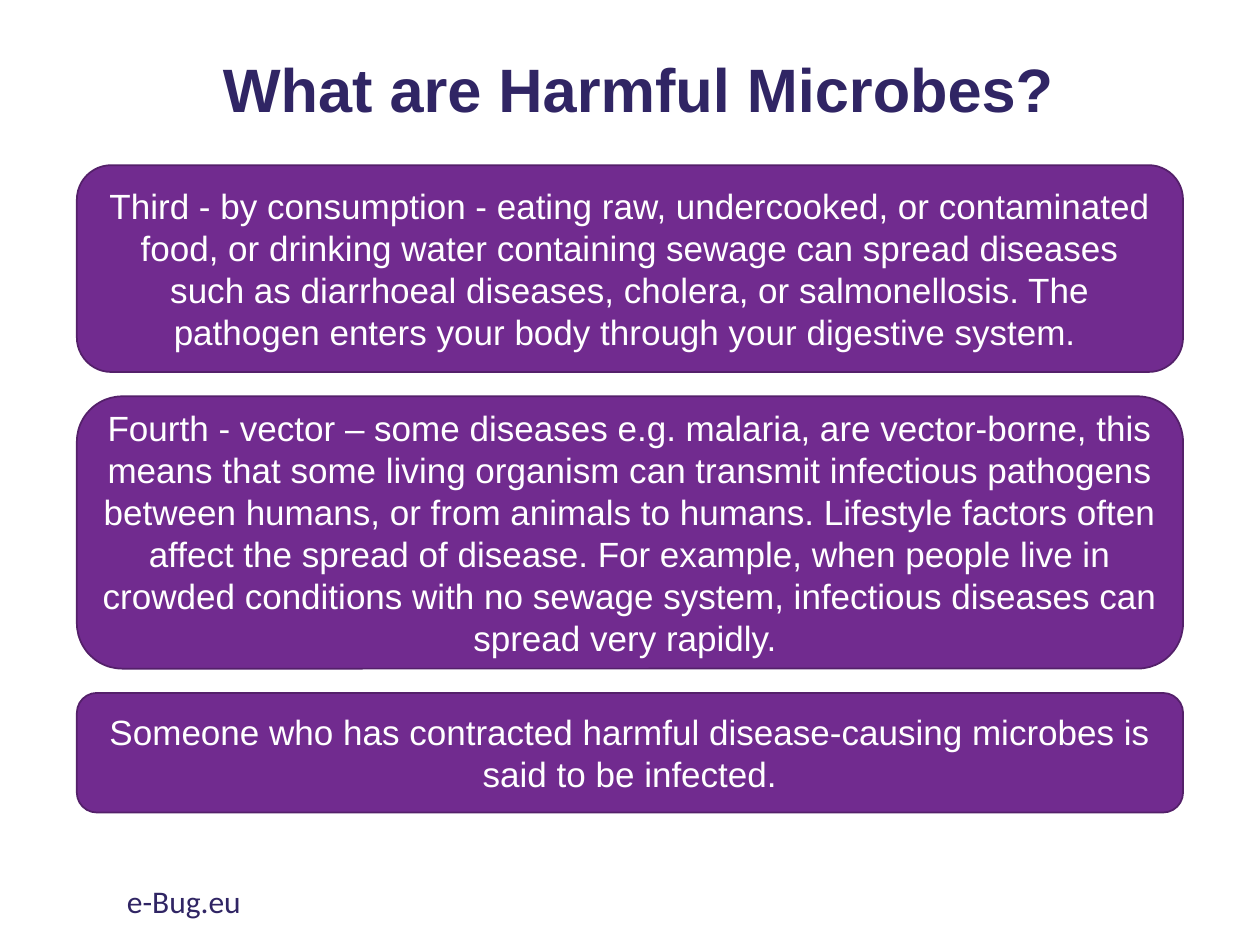
"""Builds the slide on how harmful microbes spread."""
from pptx import Presentation
from pptx.dml.color import RGBColor
from pptx.enum.shapes import MSO_SHAPE
from pptx.enum.text import MSO_ANCHOR, PP_ALIGN
from pptx.util import Cm, Pt

ROUNDED = MSO_SHAPE.ROUNDED_RECTANGLE
MIDDLE, TOP = MSO_ANCHOR.MIDDLE, MSO_ANCHOR.TOP
CENTER, LEFT = PP_ALIGN.CENTER, PP_ALIGN.LEFT

NAVY = RGBColor(0x30, 0x25, 0x64)
PURPLE = RGBColor(0x71, 0x2B, 0x8F)
DARK_PURPLE = RGBColor(0x54, 0x20, 0x6A)
WHITE = RGBColor(0xFF, 0xFF, 0xFF)

PANELS = [
    (4.17, "Third - by consumption - eating raw, undercooked, or contaminated food, "
           "or drinking water containing sewage can spread diseases such as diarrhoeal "
           "diseases, cholera, or salmonellosis. The pathogen enters your body through "
           "your digestive system. "),
    (5.49, "Fourth - vector – some diseases e.g. malaria, are vector-borne, this means "
           "that some living organism can transmit infectious pathogens between humans, "
           "or from animals to humans. Lifestyle factors often affect the spread of "
           "disease. For example, when people live in crowded conditions with no sewage "
           "system, infectious diseases can spread very rapidly. "),
    (2.41, "Someone who has contracted harmful disease-causing microbes is said to be "
           "infected."),
]
PANEL_LEFT, PANEL_TOP, PANEL_WIDTH, PANEL_GAP = 1.55, 3.33, 22.3, 0.49


class SlideBuilder:
    def __init__(self, slide):
        self.slide = slide

    def set_text(self, frame, text, size, color, font="Arial", bold=False,
                 align=CENTER, anchor=MIDDLE, spacing=1.0):
        frame.word_wrap = True
        frame.vertical_anchor = anchor
        frame.text = text
        paragraph = frame.paragraphs[0]
        paragraph.alignment = align
        paragraph.line_spacing = spacing
        style = paragraph.runs[0].font
        style.name, style.size, style.bold = font, Pt(size), bold
        style.color.rgb = color

    def label(self, left, top, width, height, text, size, **style):
        box = self.slide.shapes.add_textbox(Cm(left), Cm(top), Cm(width), Cm(height))
        self.set_text(box.text_frame, text, size, NAVY, **style)

    def panel(self, left, top, width, height, text):
        panel = self.slide.shapes.add_shape(
            ROUNDED, Cm(left), Cm(top), Cm(width), Cm(height))
        panel.shadow.inherit = False
        panel.fill.solid()
        panel.fill.fore_color.rgb = PURPLE
        panel.line.color.rgb = DARK_PURPLE
        panel.line.width = Pt(1)
        self.set_text(panel.text_frame, text, 20, WHITE)


def main():
    deck = Presentation()
    deck.slide_width, deck.slide_height = Cm(25.4), Cm(19.05)
    builder = SlideBuilder(deck.slides.add_slide(deck.slide_layouts[6]))

    builder.label(1.93, 0.71, 21.89, 2.31, "What are Harmful Microbes?", 35,
                  bold=True, spacing=0.9)
    top = PANEL_TOP
    for height, text in PANELS:
        builder.panel(PANEL_LEFT, top, PANEL_WIDTH, height, text)
        top += height + PANEL_GAP
    builder.label(2.31, 17.65, 8.59, 1.02, "e-Bug.eu", 18,
                  font="Calibri", align=LEFT, anchor=TOP)

    deck.save("out.pptx")


if __name__ == "__main__":
    main()
